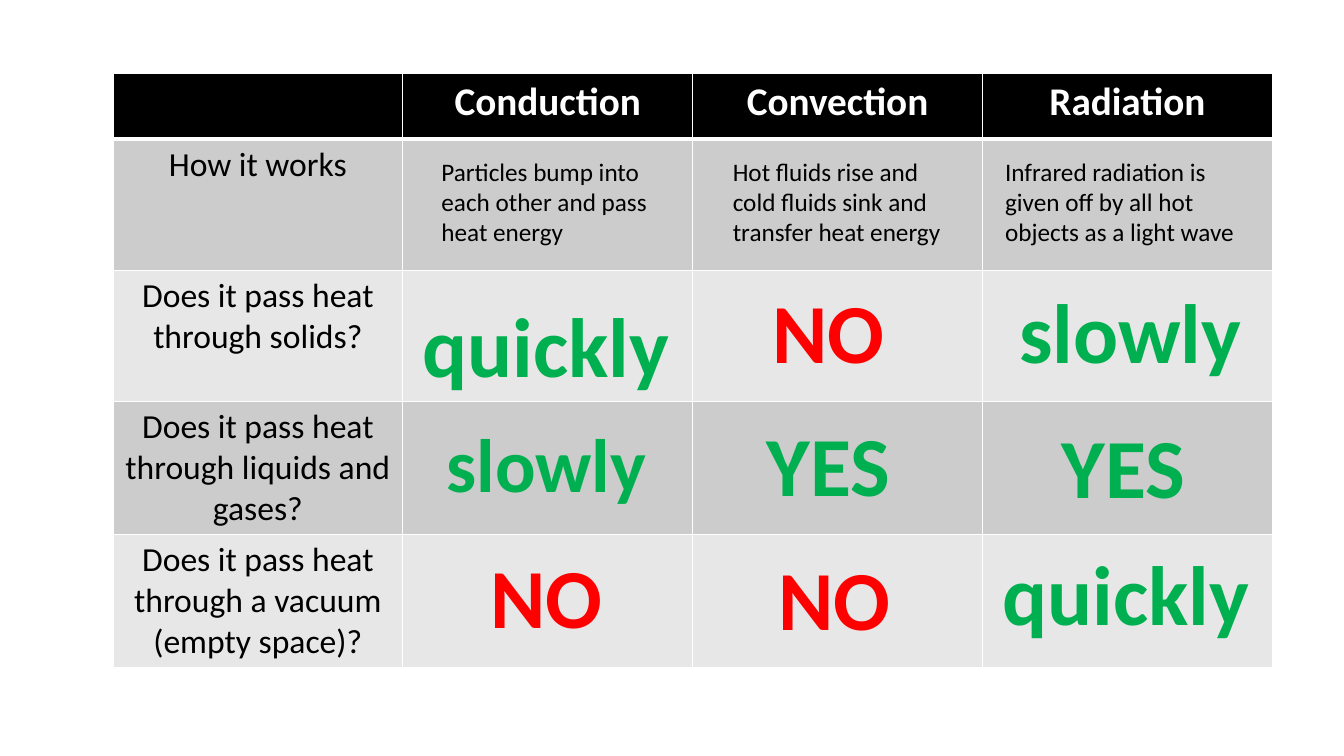
from lxml import etree
from pptx import Presentation, util as u
from pptx.dml.color import RGBColor
from pptx.enum import text
from pptx.oxml.ns import qn

FONT = "Calibri"
BLACK, WHITE, GREEN, RED = "000000", "FFFFFF", "00B050", "FF0000"
BANDS = ("CCCCCC", "E7E7E7")
HEADINGS = ("", "Conduction", "Convection", "Radiation")
QUESTIONS = (
    "How it works",
    "Does it pass heat through solids?",
    "Does it pass heat through liquids and gases?",
    "Does it pass heat through a vacuum (empty space)?",
)
EXPLANATIONS = (
    ("Particles bump into each other and pass heat energy", 3.16, 2.28),
    ("Hot fluids rise and cold fluids sink and transfer heat energy", 6.05, 2.4),
    ("Infrared radiation is given off by all hot objects as a light wave", 8.75, 2.58),
)
ANSWERS = (
    ("quickly", 2.91, 2.13, 2.77, 60),
    ("NO", 5.9, 1.99, 2.4, 60),
    ("slowly", 8.75, 1.99, 2.68, 60),
    ("slowly", 3.1, 3.36, 2.4, 54),
    ("YES", 5.9, 3.31, 2.4, 60),
    ("YES", 8.82, 3.33, 2.4, 60),
    ("NO", 3.1, 4.62, 2.4, 60),
    ("NO", 5.96, 4.64, 2.4, 60),
    ("quickly", 8.67, 4.59, 2.75, 60),
)


def rgb(color):
    return RGBColor.from_string(color)


def style(p, size, color, bold=False, centered=True):
    p.alignment = text.PP_ALIGN.CENTER if centered else text.PP_ALIGN.LEFT
    p.font.name = FONT
    p.font.size = u.Pt(size)
    p.font.bold = bold
    p.font.color.rgb = rgb(color)


def add_borders(cell, widths):
    tcPr = cell._tc.get_or_add_tcPr()
    for side, width in zip("LRTB", widths):
        ln = etree.SubElement(tcPr, qn(f"a:ln{side}"), w=str(u.Pt(width)))
        fill = etree.SubElement(ln, qn("a:solidFill"))
        etree.SubElement(fill, qn("a:srgbClr"), val=WHITE)


def add_label(s, label, left, top, width, height, size, color, bold, centered):
    box = s.shapes.add_textbox(*map(u.Inches, (left, top, width, height)))
    tf = box.text_frame
    tf.word_wrap = True
    tf.auto_size = text.MSO_AUTO_SIZE.SHAPE_TO_FIT_TEXT
    p = tf.paragraphs[0]
    p.text = label
    style(p, size, color, bold, centered)


def heat_table(s, left, top, width, height):
    rows, cols = len(QUESTIONS) + 1, len(HEADINGS)
    table = s.shapes.add_table(rows, cols, *map(u.Inches, (left, top, width, height))).table
    for i, row in enumerate(table.rows):
        row.height = u.Inches(1.3 if i else 0.65)
        for j, cell in enumerate(row.cells):
            add_borders(cell, (1, 1, 3 if i == 1 else 1, 1 if i else 3))
            cell.fill.solid()
            cell.fill.fore_color.rgb = rgb(BANDS[(i - 1) % 2] if i else BLACK)
            label = HEADINGS[j] if i == 0 else QUESTIONS[i - 1] if j == 0 else ""
            if label:
                cell.text = label
                style(cell.text_frame.paragraphs[0], 24 if i else 28,
                      BLACK if i else WHITE, bold=i == 0)


def explanations(s, left, top):
    for label, dx, width in EXPLANATIONS:
        add_label(s, label, left + dx, top + 0.77, width, 1.01, 18, BLACK, False, False)


def answers(s, left, top):
    for label, dx, dy, width, size in ANSWERS:
        color = RED if label == "NO" else GREEN
        height = 1.11 if size == 60 else 1.01
        add_label(s, label, left + dx, top + dy, width, height, size, color, True, True)


def main():
    prs = Presentation()
    prs.slide_width, prs.slide_height = u.Inches(13.33), u.Inches(7.5)
    s = prs.slides.add_slide(prs.slide_layouts[6])
    left, top = 1.12, 0.73
    heat_table(s, left, top, 11.5, 5.86)
    explanations(s, left, top)
    answers(s, left, top)
    prs.save("out.pptx")


if __name__ == "__main__":
    main()
